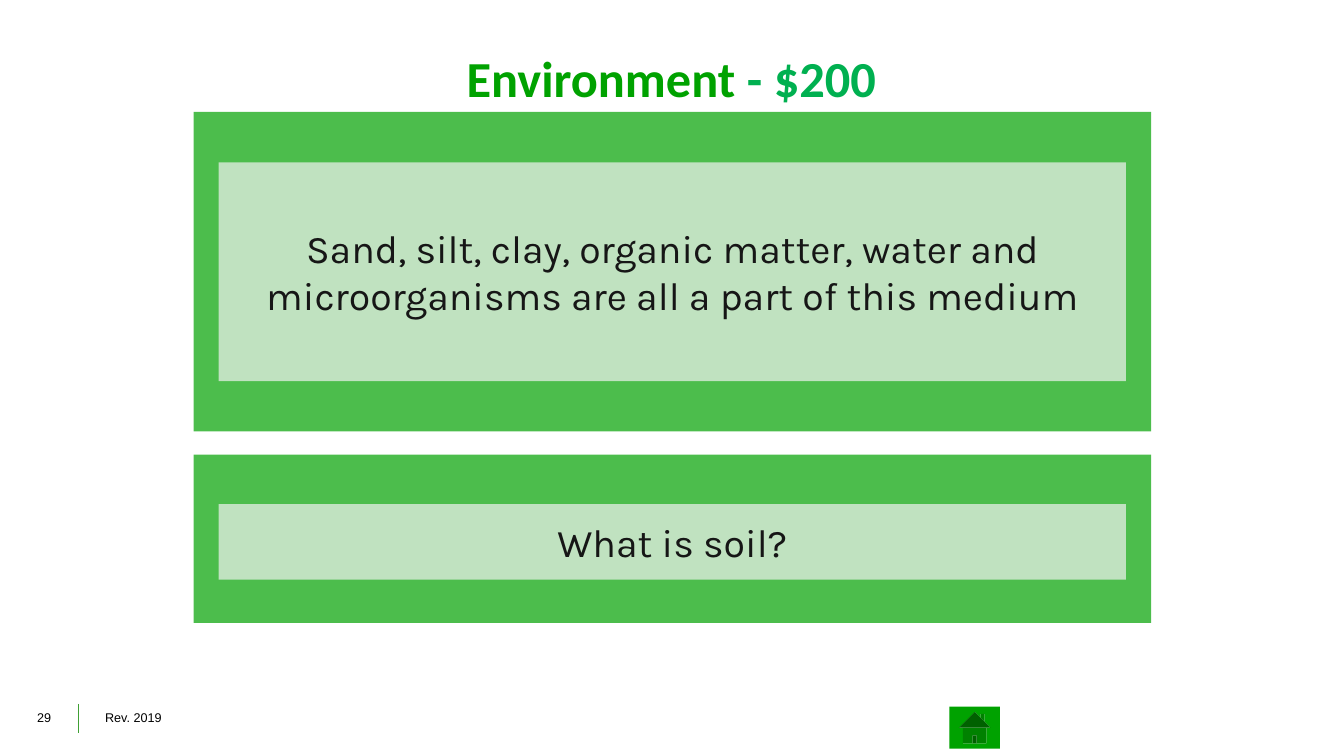
from lxml import etree
from pptx import Presentation
from pptx.dml.color import RGBColor
from pptx.enum.shapes import MSO_CONNECTOR as LINE, MSO_SHAPE as SHAPE
from pptx.enum.text import MSO_ANCHOR as ANCHOR, PP_ALIGN as ALIGN
from pptx.oxml.ns import qn
from pptx.util import Pt

COLORS = {
    "green": "00A200",
    "price": "00B050",
    "inset": "F2F2F2",
    "ink": "161616",
    "footer": "000000",
    "divider": "40A035",
}


def color(name):
    """Return the named palette colour."""
    return RGBColor.from_string(COLORS[name])


def write(frame, *runs, size, font, align=ALIGN.LEFT, anchor=ANCHOR.TOP,
          bold=False, wrap=True, margins=None):
    """Fill a text frame with one paragraph of (text, colour) runs."""
    frame.word_wrap = wrap
    frame.vertical_anchor = anchor
    if margins is not None:
        frame.margin_left = frame.margin_right = Pt(margins)
        frame.margin_top = frame.margin_bottom = Pt(margins)
    paragraph = frame.paragraphs[0]
    paragraph.alignment = align
    for text, ink in runs:
        run = paragraph.add_run()
        run.text = text
        run.font.size = Pt(size)
        run.font.name = font
        run.font.bold = bold
        run.font.color.rgb = color(ink)


def add_block(slide, kind, box, fill, opacity=100):
    """Add a borderless filled shape with the given opacity in percent."""
    block = slide.shapes.add_shape(kind, *map(Pt, box))
    block.shadow.inherit = False
    block.line.fill.background()
    block.fill.solid()
    block.fill.fore_color.rgb = color(fill)
    if opacity < 100:
        rgb = block.fill._xPr.find(qn("a:solidFill")).find(qn("a:srgbClr"))
        etree.SubElement(rgb, qn("a:alpha")).set("val", str(opacity * 1000))
    return block


def add_card(slide, box, text, top_pad, bottom_pad, side_pad=18):
    """Add a green panel with a pale inset that holds the text."""
    left, top, width, height = box
    add_block(slide, SHAPE.RECTANGLE, box, "green", opacity=70)
    inset_box = (left + side_pad, top + top_pad,
                 width - 2 * side_pad, height - top_pad - bottom_pad)
    inset = add_block(slide, SHAPE.RECTANGLE, inset_box, "inset", opacity=70)
    write(inset.text_frame, (text, "ink"), size=28, font="Karla",
          align=ALIGN.CENTER, anchor=ANCHOR.MIDDLE)


def add_title(slide, box, category, price):
    """Add the centred category and price heading."""
    title = slide.shapes.add_textbox(*map(Pt, box))
    write(title.text_frame, (category, "green"), (price, "price"), size=36,
          font="Calibri", align=ALIGN.CENTER, bold=True, margins=0)


def add_footer(slide, box, number, revision):
    """Add the page number, divider, revision and home button."""
    left, top, width, height = box
    for text, offset, label_width in ((number, 0, 35.5), (revision, 48.5, 56)):
        label = slide.shapes.add_textbox(
            Pt(left + offset), Pt(top), Pt(label_width), Pt(height))
        write(label.text_frame, (text, "footer"), size=9, font="Arial",
              wrap=False)
    divider_x = Pt(left + 36.5)
    divider = slide.shapes.add_connector(
        LINE.STRAIGHT, divider_x, Pt(top - 0.5), divider_x, Pt(top + 20.5))
    divider.line.color.rgb = color("divider")
    divider.line.width = Pt(0.25)
    etree.SubElement(divider._element.spPr, qn("a:effectLst"))
    home_box = (left + width - 36, top + 1.5, 36, 30)
    add_block(slide, SHAPE.ACTION_BUTTON_HOME, home_box, "green")


def main():
    """Build the quiz slide and save it."""
    deck = Presentation()
    deck.slide_width, deck.slide_height = Pt(960), Pt(540)
    slide = deck.slides.add_slide(deck.slide_layouts[6])
    add_footer(slide, (19.5, 503.25, 694.75, 18), "29", "Rev. 2019")
    add_card(slide, (138.25, 80, 684, 228.25),
             "Sand, silt, clay, organic matter, water and microorganisms "
             "are all a part of this medium", top_pad=36, bottom_pad=36)
    add_card(slide, (138.25, 324.75, 684, 120.25), "What is soil?",
             top_pad=35.25, bottom_pad=31)
    add_title(slide, (17.25, 34, 924.5, 67), "Environment ", "- $200")
    deck.save("out.pptx")


if __name__ == "__main__":
    main()
